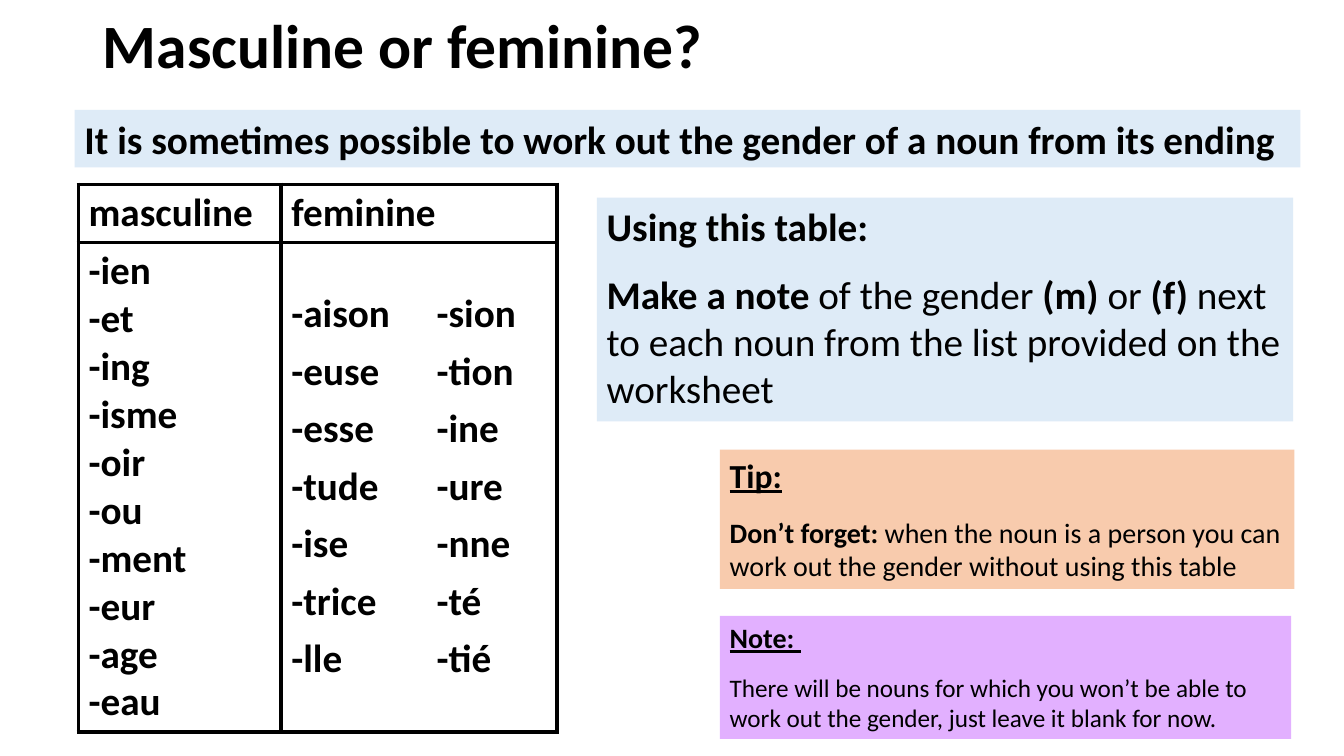
from dataclasses import dataclass

from lxml import etree
from pptx import Presentation
from pptx.dml.color import RGBColor
from pptx.enum.text import MSO_ANCHOR, PP_ALIGN
from pptx.oxml.ns import qn
from pptx.util import Cm, Pt

LEFT = PP_ALIGN.LEFT
TOP = MSO_ANCHOR.TOP
MIDDLE = MSO_ANCHOR.MIDDLE


@dataclass(frozen=True)
class Theme:
    font: str = "Calibri"
    ink: str = "000000"
    blue: str = "DEEBF7"
    peach: str = "F8CBAD"
    violet: str = "E2B0FF"
    title: float = 44
    large: float = 28
    head: float = 24
    body: float = 20
    small: float = 18
    rule: float = 3


THEME = Theme()

# Content: a run is (text, size, style), with b for bold and u for underline
TITLE = "Masculine or feminine?"
HEADS = ["masculine", "feminine"]
ENDINGS = [
    ["-ien", "-et", "-ing", "-isme", "-oir", "-ou", "-ment", "-eur", "-age", "-eau"],
    ["-aison", "-euse", "-esse", "-tude", "-ise", "-trice", "-lle"],
    ["-sion", "-tion", "-ine", "-ure", "-nne", "-té", "-tié"],
]
BIG, MID, LOW = THEME.large, THEME.body, THEME.small
BANNER = [
    [("It is sometimes possible to work out the gender of a noun from its ending", BIG, "b")],
]
USAGE = [
    [("Using this table:", BIG, "b")],
    [
        ("Make a note ", BIG, "b"),
        ("of the gender ", BIG, ""),
        ("(m) ", BIG, "b"),
        ("or ", BIG, ""),
        ("(f) ", BIG, "b"),
        ("next to each noun from the list provided on the worksheet", BIG, ""),
    ],
]
TIP = [
    [("Tip:", THEME.head, "bu")],
    [
        ("Don’t forget: ", MID, "b"),
        ("when the noun is a person you can work out the gender without using this table", MID, ""),
    ],
]
NOTE = [
    [("Note: ", MID, "bu")],
    [("There will be nouns for which you won’t be able to work out the gender, "
      "just leave it blank for now.", LOW, "")],
]

# Panels: left, top, width, height in cm, fill, gap in points, paragraphs
PANELS = [
    (1.88, 2.77, 30.89, 1.45, THEME.blue, 0, BANNER),
    (15.04, 4.98, 17.55, 5.64, THEME.blue, 14.6, USAGE),
    (18.14, 11.33, 14.48, 3.51, THEME.peach, 14.6, TIP),
    (18.14, 15.52, 14.4, 3.1, THEME.violet, 12.8, NOTE),
]
COLS = [5.11, 3.66, 3.28]
ROWS = [1.46, 12.33]


def add_run(para, text, size, style):
    run = para.add_run()
    run.text = text
    font = run.font
    font.name = THEME.font
    font.size = Pt(size)
    font.bold = "b" in style
    font.underline = "u" in style
    font.color.rgb = RGBColor.from_string(THEME.ink)


def write(frame, paras, gap=0, pitch=None):
    for i, runs in enumerate(paras):
        para = frame.add_paragraph() if i else frame.paragraphs[0]
        para.alignment = LEFT
        if i and gap:
            para.space_before = Pt(gap)
        if pitch:
            para.line_spacing = pitch
        for run in runs:
            add_run(para, *run)


def add_panel(slide, left, top, width, height, fill, gap, paras):
    box = slide.shapes.add_textbox(Cm(left), Cm(top), Cm(width), Cm(height))
    box.fill.solid()
    box.fill.fore_color.rgb = RGBColor.from_string(fill)
    box.text_frame.word_wrap = True
    box.text_frame.vertical_anchor = TOP
    write(box.text_frame, paras, gap)


def set_edges(cell, shown):
    props = cell._tc.get_or_add_tcPr()
    for i, side in enumerate("LRTB"):
        line = etree.Element(qn(f"a:ln{side}"), w=str(Pt(THEME.rule)))
        if side in shown:
            fill = etree.SubElement(line, qn("a:solidFill"))
            etree.SubElement(fill, qn("a:srgbClr"), val=THEME.ink)
        else:
            etree.SubElement(line, qn("a:noFill"))
        props.insert(i, line)


def add_grid(slide):
    table = slide.shapes.add_table(
        len(ROWS), len(COLS), Cm(1.98), Cm(4.65), Cm(sum(COLS)), Cm(sum(ROWS))
    ).table
    table.first_row = table.horz_banding = False
    for col, width in zip(table.columns, COLS):
        col.width = Cm(width)
    for row, height in zip(table.rows, ROWS):
        row.height = Cm(height)
    table.cell(0, 1).merge(table.cell(0, 2))

    # The two feminine columns share one open frame
    for row in range(len(ROWS)):
        for col, shown in enumerate(["LRTB", "LTB", "RTB"]):
            cell = table.cell(row, col)
            cell.fill.background()
            set_edges(cell, "LRTB" if cell.is_merge_origin else shown)

    for col, head in enumerate(HEADS):
        write(table.cell(0, col).text_frame, [[(head, BIG, "b")]])
    for col, words in enumerate(ENDINGS):
        cell = table.cell(1, col)
        if col:
            cell.margin_top = Cm(0.97)
        paras = [[(word, BIG, "b")] for word in words]
        write(cell.text_frame, paras, pitch=1.2 if col else None)


def main():
    deck = Presentation()
    deck.slide_width, deck.slide_height = Cm(33.87), Cm(19.05)
    slide = deck.slides.add_slide(deck.slide_layouts[5])

    # Title
    title = slide.shapes.title
    title.left, title.top = Cm(2.34), Cm(0)
    title.width, title.height = Cm(29.21), Cm(2.46)
    title.text_frame.vertical_anchor = MIDDLE
    write(title.text_frame, [[(TITLE, THEME.title, "b")]], pitch=0.9)

    # Table and panels
    add_grid(slide)
    for panel in PANELS:
        add_panel(slide, *panel)

    deck.save("out.pptx")


if __name__ == "__main__":
    main()
